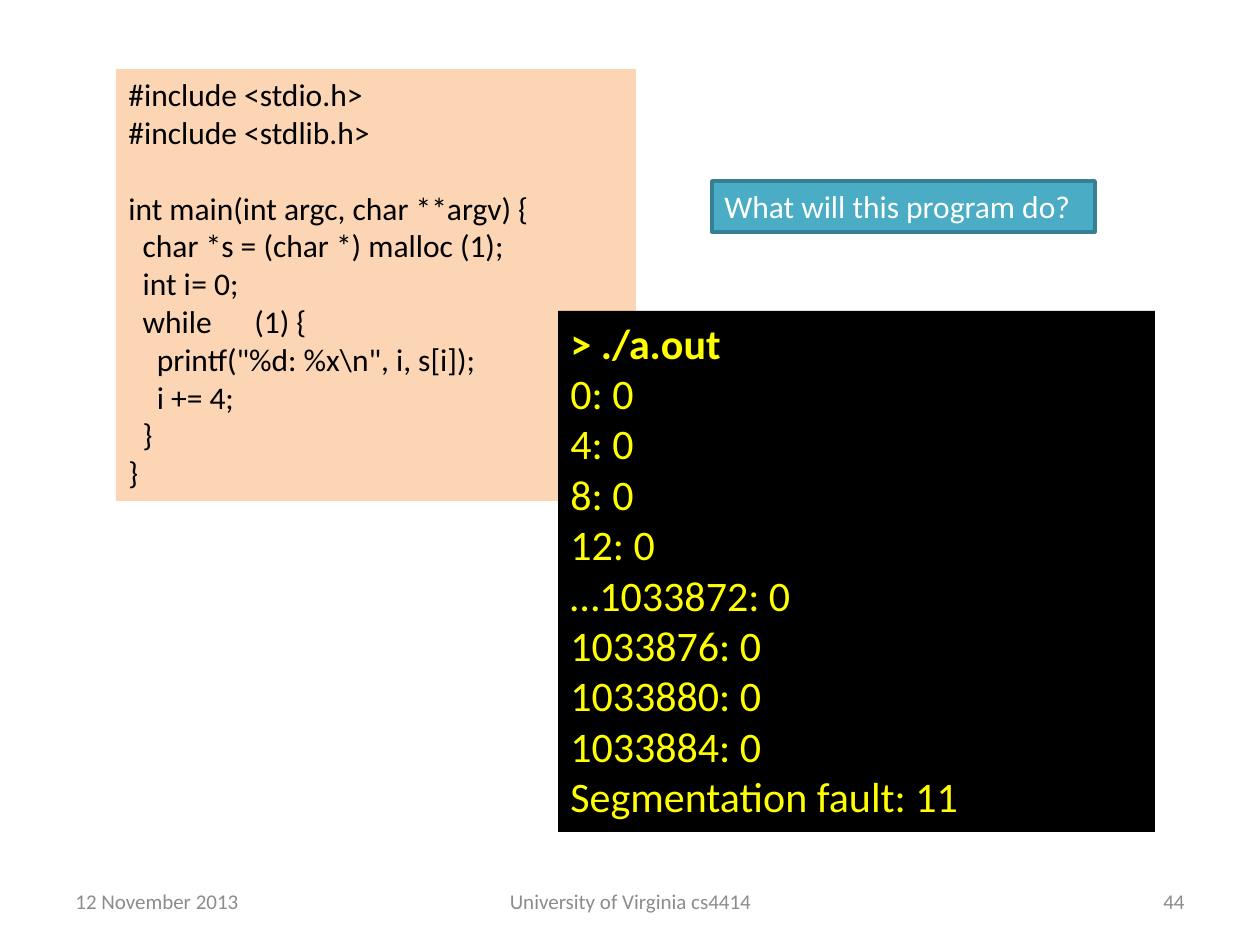
from dataclasses import dataclass
from typing import Optional

import pptx
import pptx.dml.color
import pptx.enum.shapes
import pptx.enum.text
import pptx.util

RGBColor = pptx.dml.color.RGBColor
ALIGN = pptx.enum.text.PP_ALIGN
ANCHOR = pptx.enum.text.MSO_ANCHOR

WHITE = RGBColor(0xFF, 0xFF, 0xFF)
BLACK = RGBColor(0x00, 0x00, 0x00)
YELLOW = RGBColor(0xFF, 0xFF, 0x00)
GREY = RGBColor(0x8C, 0x8C, 0x8C)
PEACH = RGBColor(0xFC, 0xD5, 0xB5)
TEAL = RGBColor(0x4B, 0xAC, 0xC6)
DARK_TEAL = RGBColor(0x37, 0x7F, 0x92)

FONT = "Calibri"
PX_PER_INCH = 126

CODE = r"""#include <stdio.h>
#include <stdlib.h>

int main(int argc, char **argv) {
  char *s = (char *) malloc (1);
  int i	= 0;
  while	(1) {
    printf("%d: %x\n", i, s[i]);
    i += 4;
  }
}"""

OUTPUT = """> ./a.out
0: 0
4: 0
8: 0
12: 0
…1033872: 0
1033876: 0
1033880: 0
1033884: 0
Segmentation fault: 11"""


@dataclass(frozen=True)
class Panel:
    text: str
    left: int
    top: int
    width: int
    height: int
    size: int
    color: RGBColor
    fill: RGBColor
    line: Optional[RGBColor] = None
    bold_first: bool = False


@dataclass(frozen=True)
class Footer:
    text: str
    left: int
    width: int
    align: ALIGN


PANELS = [
    Panel(CODE, 116, 69, 520, 432, 18, BLACK, PEACH),
    Panel("What will this program do?", 712, 181, 383, 51, 18, WHITE, TEAL,
          line=DARK_TEAL),
    Panel(OUTPUT, 558, 311, 597, 521, 24, YELLOW, BLACK, bold_first=True),
]

FOOTER_TOP, FOOTER_HEIGHT = 876, 50
FOOTERS = [
    Footer("12 November 2013", 63, 294, ALIGN.LEFT),
    Footer("University of Virginia cs4414", 431, 399, ALIGN.CENTER),
    Footer("44", 903, 294, ALIGN.RIGHT),
]


def px(length: int) -> pptx.util.Emu:
    return pptx.util.Emu(round(length * 914400 / PX_PER_INCH))


def write_lines(frame, text: str, size: int, color: RGBColor,
                align: ALIGN, bold_first: bool = False) -> None:
    frame.word_wrap = True
    for index, line in enumerate(text.split("\n")):
        para = frame.add_paragraph() if index else frame.paragraphs[0]
        para.alignment = align
        if not line:
            para.font.size = pptx.util.Pt(size)
            continue
        run = para.add_run()
        run.text = line
        run.font.name = FONT
        run.font.size = pptx.util.Pt(size)
        run.font.bold = bold_first and index == 0
        run.font.color.rgb = color


def draw_panel(page, panel: Panel) -> None:
    box = page.shapes.add_shape(
        pptx.enum.shapes.MSO_SHAPE.RECTANGLE,
        px(panel.left), px(panel.top), px(panel.width), px(panel.height))
    box.shadow.inherit = False
    box.fill.solid()
    box.fill.fore_color.rgb = panel.fill
    if panel.line is None:
        box.line.fill.background()
    else:
        box.line.color.rgb = panel.line
        box.line.width = pptx.util.Pt(2)
    frame = box.text_frame
    frame.vertical_anchor = ANCHOR.TOP
    frame.auto_size = pptx.enum.text.MSO_AUTO_SIZE.SHAPE_TO_FIT_TEXT
    write_lines(frame, panel.text, panel.size, panel.color, ALIGN.LEFT,
                panel.bold_first)


def draw_footer(page, footer: Footer) -> None:
    box = page.shapes.add_textbox(
        px(footer.left), px(FOOTER_TOP), px(footer.width), px(FOOTER_HEIGHT))
    box.text_frame.vertical_anchor = ANCHOR.MIDDLE
    write_lines(box.text_frame, footer.text, 12, GREY, footer.align)


def main() -> None:
    deck = pptx.Presentation()
    deck.slide_width = px(10 * PX_PER_INCH)
    deck.slide_height = px(945)
    page = deck.slides.add_slide(deck.slide_layouts[6])  # blank: no title

    # Date, course and page number
    for footer in FOOTERS:
        draw_footer(page, footer)

    # Program, question and terminal output
    for panel in PANELS:
        draw_panel(page, panel)

    deck.save("out.pptx")


if __name__ == "__main__":
    main()
